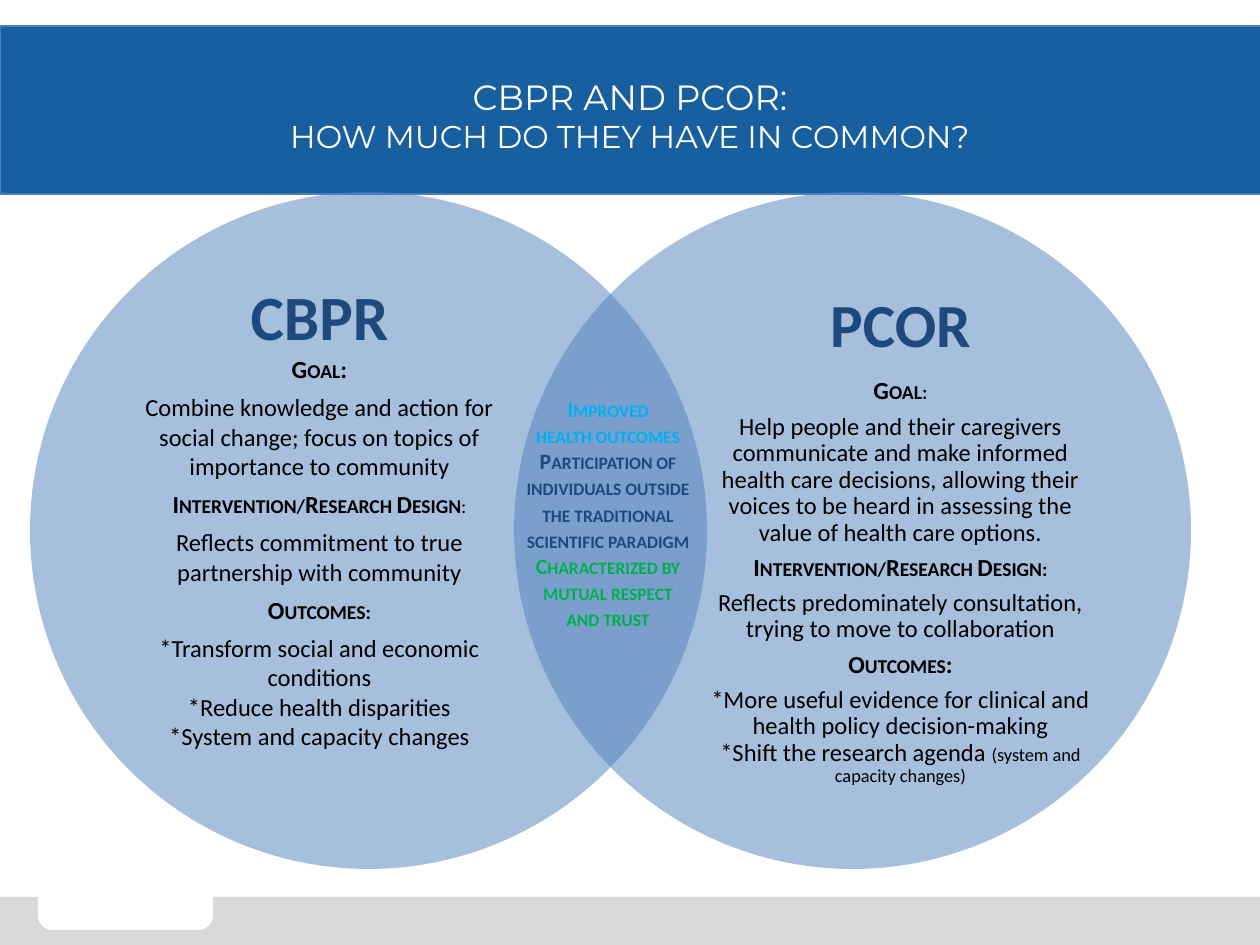
"""Build a Venn slide comparing CBPR and PCOR."""
from dataclasses import dataclass

from lxml import etree
from pptx import Presentation
from pptx.dml.color import RGBColor
from pptx.enum.shapes import MSO_SHAPE
from pptx.enum.text import MSO_ANCHOR, MSO_AUTO_SIZE, PP_ALIGN
from pptx.oxml.ns import qn
from pptx.util import Emu, Pt

RECTANGLE = MSO_SHAPE.RECTANGLE
ROUNDED = MSO_SHAPE.ROUNDED_RECTANGLE
OVAL = MSO_SHAPE.OVAL
CENTER = PP_ALIGN.CENTER
TOP = MSO_ANCHOR.TOP
NO_AUTOFIT = MSO_AUTO_SIZE.NONE
GROW = MSO_AUTO_SIZE.SHAPE_TO_FIT_TEXT

PX_PER_INCH = 126
TITLE_ONLY = 5
COLORS = {
    "banner": "175F9E",
    "banner_edge": "4B7EBC",
    "footer": "D9D9D9",
    "white": "FFFFFF",
    "black": "000000",
    "circle": "4F81BD",
    "navy": "1F497D",
    "sky": "00B0F0",
    "green": "00B050",
}


@dataclass(frozen=True)
class Box:
    left: int
    top: int
    width: int
    height: int


@dataclass(frozen=True)
class Span:
    text: str
    bold: bool = False
    small_caps: bool = False
    size: float | None = None


@dataclass(frozen=True)
class Line:
    spans: tuple[Span, ...]
    size: float = 14
    color: str = "black"
    spacing: float = 1.0
    after: float = 5


@dataclass(frozen=True)
class Approach:
    circle: Box
    text: Box
    lines: tuple[Line, ...]


def px(length: int) -> Emu:
    """Turn pixels into EMU."""
    return Emu(round(length * 914400 / PX_PER_INCH))


def rgb(name: str) -> RGBColor:
    """Look up a named colour."""
    return RGBColor.from_string(COLORS[name])


def place(box: Box) -> tuple[Emu, Emu, Emu, Emu]:
    """Return the box in EMU."""
    return px(box.left), px(box.top), px(box.width), px(box.height)


def draw_shape(slide, kind, box: Box, color: str, edge: str = "", alpha: int = 100) -> None:
    """Draw a filled shape, optionally edged or see-through."""
    shape = slide.shapes.add_shape(kind, *place(box))
    shape.shadow.inherit = False
    shape.fill.solid()
    shape.fill.fore_color.rgb = rgb(color)
    if edge:
        shape.line.color.rgb = rgb(edge)
        shape.line.width = Pt(0.75)
    else:
        shape.line.fill.background()
    if alpha < 100:
        tint = shape.fill._xPr.find(f"{qn('a:solidFill')}/{qn('a:srgbClr')}")
        etree.SubElement(tint, qn("a:alpha")).set("val", str(alpha * 1000))


def write_span(paragraph, span: Span) -> None:
    """Add a span, breaking lines at newlines."""
    for index, part in enumerate(span.text.split("\n")):
        if index:
            paragraph.add_line_break()
        run = paragraph.add_run()
        run.text = part
        run.font.bold = span.bold
        if span.small_caps:
            run.font._element.set("cap", "small")
        if span.size:
            run.font.size = Pt(span.size)


def write_lines(frame, lines: tuple[Line, ...]) -> None:
    """Fill a text frame with centred lines."""
    for index, line in enumerate(lines):
        paragraph = frame.add_paragraph() if index else frame.paragraphs[0]
        paragraph.alignment = CENTER
        paragraph.line_spacing = line.spacing
        paragraph.space_after = Pt(line.after)
        paragraph.font.name = "Calibri"
        paragraph.font.size = Pt(line.size)
        paragraph.font.color.rgb = rgb(line.color)
        for span in line.spans:
            write_span(paragraph, span)


def draw_text(slide, box: Box, lines: tuple[Line, ...]):
    """Add a wrapping text box and return its frame."""
    frame = slide.shapes.add_textbox(*place(box)).text_frame
    frame.word_wrap = True
    frame.vertical_anchor = TOP
    write_lines(frame, lines)
    return frame


def write_title(slide) -> None:
    """Place the two-line title above the banner."""
    title = slide.shapes.title
    slide.shapes._spTree.append(title._element)
    title.left, title.top, title.width, title.height = place(Box(63, 69, 1134, 111))
    frame = title.text_frame
    frame.auto_size = NO_AUTOFIT
    frame.vertical_anchor = TOP
    paragraph = frame.paragraphs[0]
    paragraph.alignment = CENTER
    paragraph.font.name = "Montserrat"
    paragraph.font.color.rgb = rgb("white")
    write_span(paragraph, Span("CBPR AND PCOR:\n", size=20))
    write_span(paragraph, Span("HOW MUCH DO THEY HAVE IN COMMON?", size=18))


def label(text: str, *rest: Span, spacing: float = 1.0) -> Line:
    """Make a small-caps label line."""
    return Line((Span(text, True, True), *rest), spacing=spacing)


def body(text: str, *rest: Span, spacing: float = 1.0) -> Line:
    """Make a plain body line."""
    return Line((Span(text), *rest), spacing=spacing)


def shared(text: str, color: str) -> Line:
    """Make a line for the overlap."""
    return Line((Span(text, True, True),), 12.5, color, after=0)


TIGHT = 0.9
CBPR = Approach(Box(30, 192, 677, 677), Box(125, 286, 389, 501), (
    Line((Span("CBPR", True),), 36, "navy", TIGHT, 0),
    label("Goal", Span(":", True)),
    body("Combine knowledge and action for social change; focus on topics of importance to community"),
    label("Intervention/Research Design", Span(":", small_caps=True)),
    body("Reflects commitment to true partnership with community"),
    label("Outcomes:"),
    body("*Transform social and economic conditions\n*Reduce health disparities\n"
         "*System and capacity changes"),
))
PCOR = Approach(Box(514, 192, 677, 677), Box(706, 295, 389, 492), (
    Line((Span("PCOR", True),), 35, "navy", TIGHT, 10),
    label("Goal:", spacing=TIGHT),
    body("Help people and their caregivers communicate and make informed health care decisions, "
         "allowing their voices to be heard in assessing the value of health care options.", spacing=TIGHT),
    label("Intervention/Research Design:", spacing=TIGHT),
    body("Reflects predominately consultation, trying to move to collaboration", spacing=TIGHT),
    label("Outcomes", Span(":", True), spacing=TIGHT),
    body("*More useful evidence for clinical and health policy decision-making\n"
         "*Shift the research agenda ", Span("(system and capacity changes)", size=10.5), spacing=TIGHT),
))
COMMON_GROUND = (
    shared("Improved", "sky"),
    shared("health outcomes", "sky"),
    shared("Participation of individuals outside the traditional scientific paradigm", "navy"),
    shared("Characterized by mutual respect and trust", "green"),
)


def main() -> None:
    """Assemble and save the slide."""
    deck = Presentation()
    deck.slide_width, deck.slide_height = px(1260), px(945)
    slide = deck.slides.add_slide(deck.slide_layouts[TITLE_ONLY])
    draw_shape(slide, RECTANGLE, Box(0, 26, 1261, 168), "banner", "banner_edge")
    draw_shape(slide, RECTANGLE, Box(0, 897, 1260, 48), "footer")
    draw_shape(slide, ROUNDED, Box(38, 844, 175, 86), "white")
    write_title(slide)
    for approach in (CBPR, PCOR):
        draw_shape(slide, OVAL, approach.circle, "circle", alpha=50)
        frame = draw_text(slide, approach.text, approach.lines)
        frame.margin_left = frame.margin_right = frame.margin_top = frame.margin_bottom = 0
    overlap = draw_text(slide, Box(514, 389, 188, 316), COMMON_GROUND)
    overlap.auto_size = GROW
    deck.save("out.pptx")


if __name__ == "__main__":
    main()
